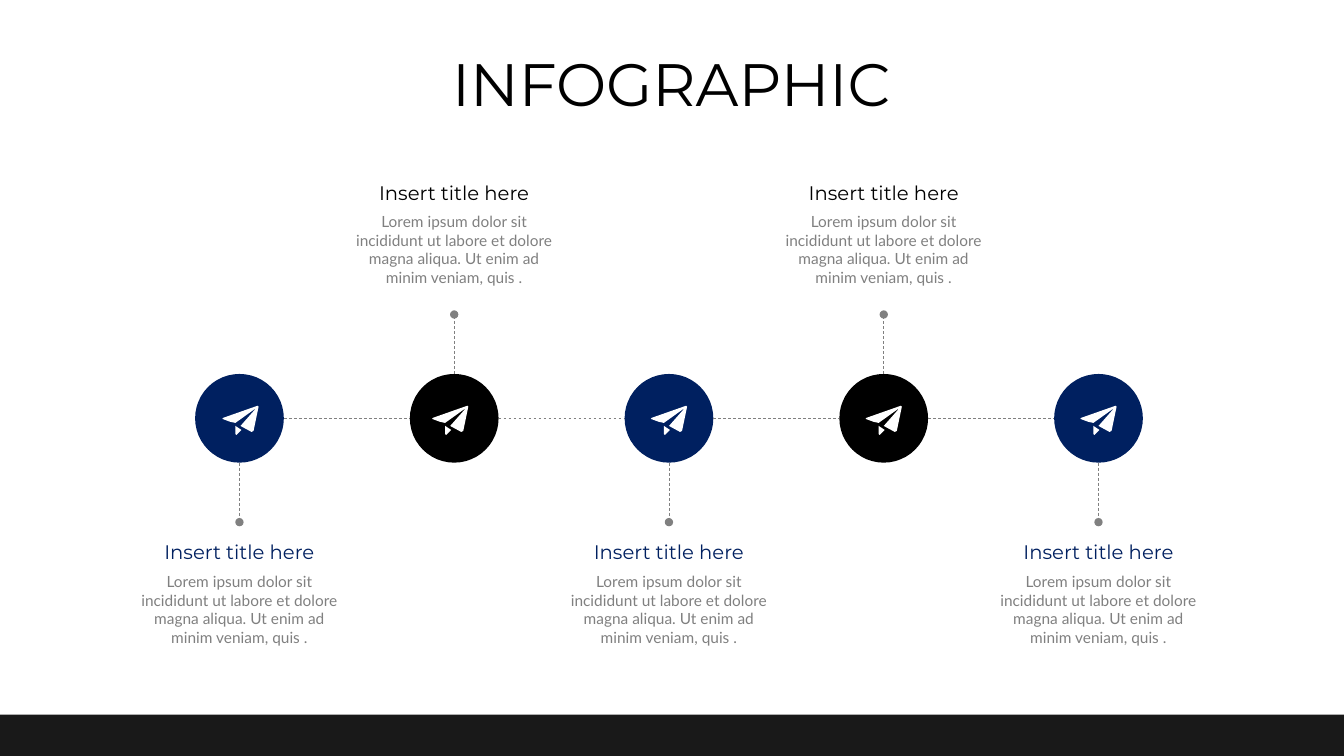
from collections import namedtuple

from lxml.etree import SubElement
from pptx import Presentation
from pptx.dml.color import RGBColor
from pptx.enum.dml import MSO_LINE_DASH_STYLE as Dash
from pptx.enum.shapes import MSO_CONNECTOR as Connector, MSO_SHAPE as Shape
from pptx.enum.text import MSO_ANCHOR as Anchor, PP_ALIGN as Align
from pptx.oxml.ns import qn
from pptx.util import Inches, Pt

Box = namedtuple("Box", "left top width height")

WHITE = RGBColor(0xFF, 0xFF, 0xFF)
BLACK = RGBColor(0x00, 0x00, 0x00)
NAVY = RGBColor(0x00, 0x20, 0x60)
GRAY = RGBColor(0x80, 0x80, 0x80)

SLIDE_WIDTH, SLIDE_HEIGHT = 13.33, 7.5
STATION_COUNT = 5
COLUMN_WIDTH = 2.13
TIMELINE = Box(1.31, 1.73, STATION_COUNT * COLUMN_WIDTH, 4.84)
CIRCLE_SIZE = 0.88
STEM_LENGTH = 0.59
LABEL_HEIGHT = 1.17
ICON_SHIFTS = (0.01, -0.04, 0, 0, 0)

PLANE_UNIT = 0.01
PLANE_SIZE = (36, 29)
PLANE_WING = [(35, 0), (1, 12), (0, 13), (8, 16), (13, 17), (34, 2),
              (19, 19), (18, 20), (29, 26), (31, 25), (36, 1)]
PLANE_TAIL = [(13, 20), (13, 28), (14, 29), (19, 24)]

HEADING = "Insert title here"
BODY = ("Lorem ipsum dolor sit incididunt ut labore et dolore magna aliqua. "
        "Ut enim ad minim veniam, quis .")


def paint(shape, color):
    shape.shadow.inherit = False
    shape.fill.solid()
    shape.fill.fore_color.rgb = color
    shape.line.fill.background()


def add_text(page, box, text, font, size, color, margins, anchor=Anchor.TOP):
    frame = page.shapes.add_textbox(*map(Inches, box)).text_frame
    frame.word_wrap = True
    frame.vertical_anchor = anchor
    frame.margin_left = frame.margin_right = Inches(margins[0])
    frame.margin_top = frame.margin_bottom = Inches(margins[1])
    para = frame.paragraphs[0]
    para.alignment = Align.CENTER
    span = para.add_run()
    span.text = text
    span.font.name = font
    span.font.size = Pt(size)
    span.font.color.rgb = color
    return para


def add_dashed_line(page, start, end, dotted_end=False):
    points = map(Inches, (*start, *end))
    connector = page.shapes.add_connector(Connector.STRAIGHT, *points)
    connector.line.color.rgb = GRAY
    connector.line.width = Pt(0.5)
    connector.line.dash_style = Dash.DASH
    if dotted_end:
        SubElement(connector.line._get_or_add_ln(), qn("a:tailEnd"), type="oval")
    SubElement(connector._element.spPr, qn("a:effectLst"))


def add_plane(page, center_x, center_y):
    builder = page.shapes.build_freeform(*PLANE_WING[0], scale=Inches(PLANE_UNIT))
    builder.add_line_segments(PLANE_WING[1:], close=True)
    builder.move_to(*PLANE_TAIL[0])
    builder.add_line_segments(PLANE_TAIL[1:], close=True)
    width, height = (side * PLANE_UNIT for side in PLANE_SIZE)
    plane = builder.convert_to_shape(Inches(center_x - width / 2),
                                     Inches(center_y - height / 2))
    paint(plane, WHITE)


def add_label(page, box, color):
    inset = 0.29
    heading_box = Box(box.left + inset, box.top, box.width - 2 * inset, 0.35)
    body_box = Box(box.left, box.top + 0.33, box.width, box.height - 0.33)
    add_text(page, body_box, BODY, "Lato", 11, GRAY, (0.1, 0.05))
    add_text(page, heading_box, HEADING, "Montserrat", 14, color, (0.06, 0.06))


def add_station(page, box, above, icon_shift):
    color = BLACK if above else NAVY
    center_x = box.left + box.width / 2
    center_y = box.top + box.height / 2
    radius = CIRCLE_SIZE / 2
    direction = -1 if above else 1
    stem_start = center_y + direction * radius
    stem_end = stem_start + direction * STEM_LENGTH
    circle = page.shapes.add_shape(Shape.OVAL, Inches(center_x - radius),
                                   Inches(center_y - radius),
                                   Inches(CIRCLE_SIZE), Inches(CIRCLE_SIZE))
    paint(circle, color)
    add_dashed_line(page, (center_x, stem_start), (center_x, stem_end), True)
    add_plane(page, center_x + icon_shift, center_y + 0.02)
    label_top = box.top if above else box.top + box.height - LABEL_HEIGHT - 0.1
    label_width = 2.3
    add_label(page, Box(center_x - label_width / 2, label_top,
                        label_width, LABEL_HEIGHT), color)


def add_timeline(page, box):
    column = box.width / STATION_COUNT
    center_y = box.top + box.height / 2
    for index, icon_shift in enumerate(ICON_SHIFTS):
        left = box.left + index * column
        if index:
            add_dashed_line(page, (left - column / 2 + CIRCLE_SIZE / 2, center_y),
                            (left + column / 2 - CIRCLE_SIZE / 2, center_y))
        add_station(page, Box(left, box.top, column, box.height),
                    index % 2 == 1, icon_shift)


def add_footer(page, box):
    bar = page.shapes.add_shape(Shape.RECTANGLE, *map(Inches, box))
    paint(bar, BLACK)
    color = bar._element.spPr.find(qn("a:solidFill"))[0]
    SubElement(color, qn("a:alpha"), val="90000")


def add_title(page, box):
    para = add_text(page, box, "INFOGRAPHIC", "Montserrat", 42.7, BLACK,
                    (0, 0), Anchor.MIDDLE)
    para.line_spacing = 0.9


def main():
    deck = Presentation()
    deck.slide_width = Inches(SLIDE_WIDTH)
    deck.slide_height = Inches(SLIDE_HEIGHT)
    page = deck.slides.add_slide(deck.slide_layouts[6])
    page.background.fill.solid()
    page.background.fill.fore_color.rgb = WHITE
    add_footer(page, Box(0, 7.09, SLIDE_WIDTH, SLIDE_HEIGHT - 7.09))
    add_title(page, Box(0.56, 0.5, 12.2, 0.72))
    add_timeline(page, TIMELINE)
    deck.save("out.pptx")


if __name__ == "__main__":
    main()
